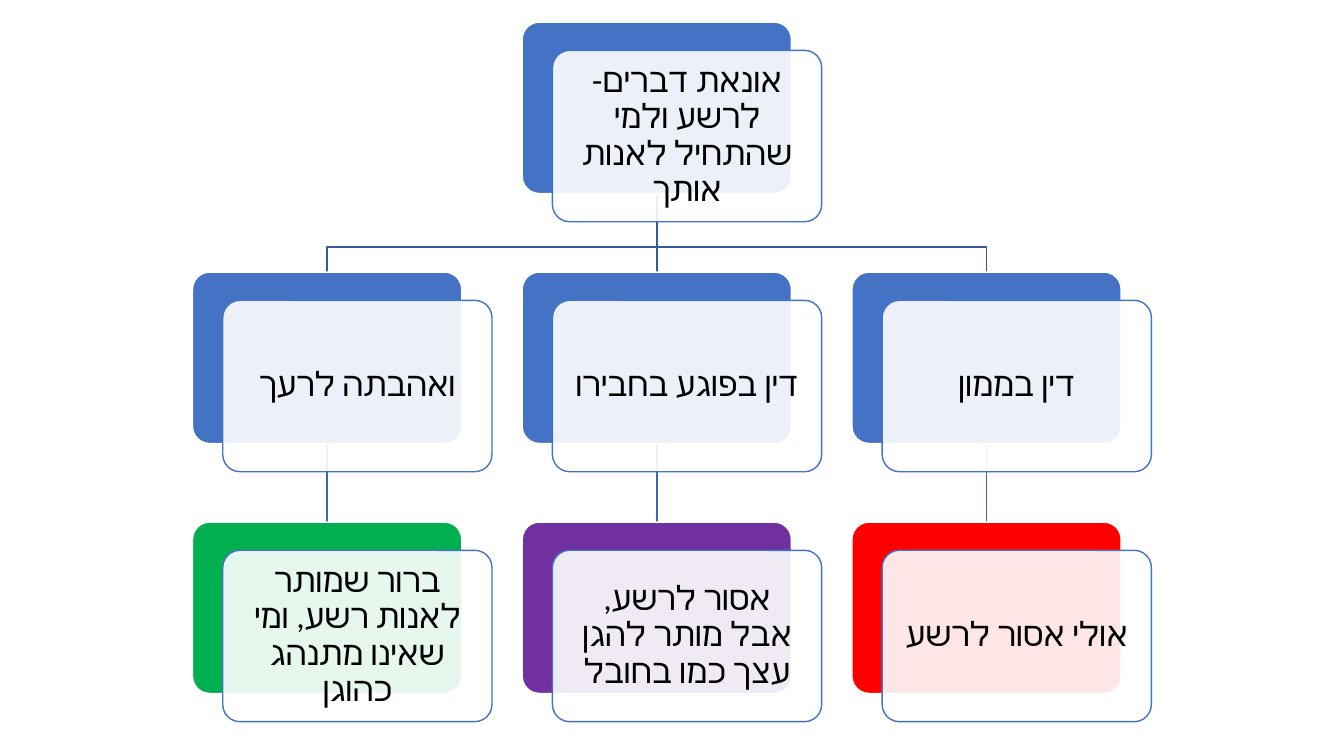
from lxml.etree import SubElement
from pptx import Presentation
from pptx.dml.color import RGBColor
from pptx.enum.shapes import MSO_CONNECTOR, MSO_SHAPE
from pptx.enum.text import MSO_ANCHOR, PP_ALIGN
from pptx.oxml.ns import qn
from pptx.util import Inches, Pt

COLORS = {
    "blue": "4472C4", "red": "FF0000", "purple": "7030A0", "green": "00B050",
    "white": "FFFFFF", "black": "000000", "branch": "365B9D", "stem": "3E67B2",
}
LEFT, TOP = 1.91, 0.22
COL, ROW = 3.27, 2.48
WIDE, HIGH = 2.67, 1.7
SHIFT_X, SHIFT_Y = 0.3, 0.28
BEND = 0.53

ROOT = "אונאת דברים- לרשע ולמי שהתחיל לאנות אותך"
BRANCHES = [
    ("ואהבתה לרעך", "ברור שמותר לאנות רשע, ומי שאינו מתנהג כהוגן", "green"),
    ("דין בפוגע בחבירו", "אסור לרשע, אבל מותר להגן עצך כמו בחובל", "purple"),
    ("דין בממון", "אולי אסור לרשע", "red"),
]


def rgb(name):
    return RGBColor.from_string(COLORS[name])


class Chart:
    """Tree of cards on a grid of columns and rows."""

    def __init__(self, slide):
        self.shapes = slide.shapes
        self.font, self.size = "Calibri", Pt(24)

    def panel(self, x, y, fill, line):
        box = self.shapes.add_shape(MSO_SHAPE.ROUNDED_RECTANGLE, Inches(x),
                                    Inches(y), Inches(WIDE), Inches(HIGH))
        box.adjustments[0] = 0.1
        box.shadow.inherit = False
        box.fill.solid()
        box.fill.fore_color.rgb = rgb(fill)
        box.line.color.rgb = rgb(line)
        box.line.width = Pt(1)
        return box

    def card(self, col, row, text, color="blue"):
        """Draw a coloured back and a clear front with text; return the back."""
        x, y = LEFT + col * COL, TOP + row * ROW
        back = self.panel(x, y, color, "white")
        front = self.panel(x + SHIFT_X, y + SHIFT_Y, "white", "blue")
        tint = front.fill._xPr.find(qn("a:solidFill"))[0]
        SubElement(tint, qn("a:alpha")).set("val", "90000")
        self.label(front.text_frame, text)
        return back

    def label(self, frame, text):
        frame.word_wrap = True
        frame.vertical_anchor = MSO_ANCHOR.MIDDLE
        frame.margin_left = frame.margin_right = Inches(0.15)
        frame.margin_top = frame.margin_bottom = Inches(0.15)
        para = frame.paragraphs[0]
        para.text = text
        para.alignment = PP_ALIGN.CENTER
        para.line_spacing = 0.9
        para._p.get_or_add_pPr().set("rtl", "1")
        font = para.font
        font.size, font.name = self.size, self.font
        font.color.rgb = rgb("black")
        SubElement(font._rPr, qn("a:cs")).set("typeface", self.font)

    def sink(self, item, color):
        """Style a line and send it behind the cards."""
        item.line.color.rgb = rgb(color)
        item.line.width = Pt(1)
        self.shapes._spTree.insert(2, item._element)

    def stem(self, upper, lower, color="stem"):
        link = self.shapes.add_connector(MSO_CONNECTOR.STRAIGHT, 0, 0, 0, 0)
        link.begin_connect(upper, 2)
        link.end_connect(lower, 0)
        SubElement(link._element.spPr, qn("a:effectLst"))
        self.sink(link, color)

    def elbow(self, upper, lower):
        """Draw a line that goes down, across and down again."""
        start = upper.left + upper.width // 2
        end = lower.left + lower.width // 2
        base = upper.top + upper.height
        bend = base + Inches(BEND)
        pen = self.shapes.build_freeform(start, base)
        pen.add_line_segments([(start, bend), (end, bend), (end, lower.top)],
                              close=False)
        bent = pen.convert_to_shape()
        bent.shadow.inherit = False
        bent.fill.background()
        self.sink(bent, "branch")


def main():
    deck = Presentation()
    deck.slide_width, deck.slide_height = Inches(13.33), Inches(7.5)
    chart = Chart(deck.slides.add_slide(deck.slide_layouts[6]))
    root = chart.card(1, 0, ROOT)
    for col, (rule, result, color) in enumerate(BRANCHES):
        mid = chart.card(col, 1, rule)
        leaf = chart.card(col, 2, result, color)
        chart.stem(mid, leaf)
        if col == 1:
            chart.stem(root, mid, "branch")
        else:
            chart.elbow(root, mid)
    deck.save("out.pptx")


if __name__ == "__main__":
    main()
